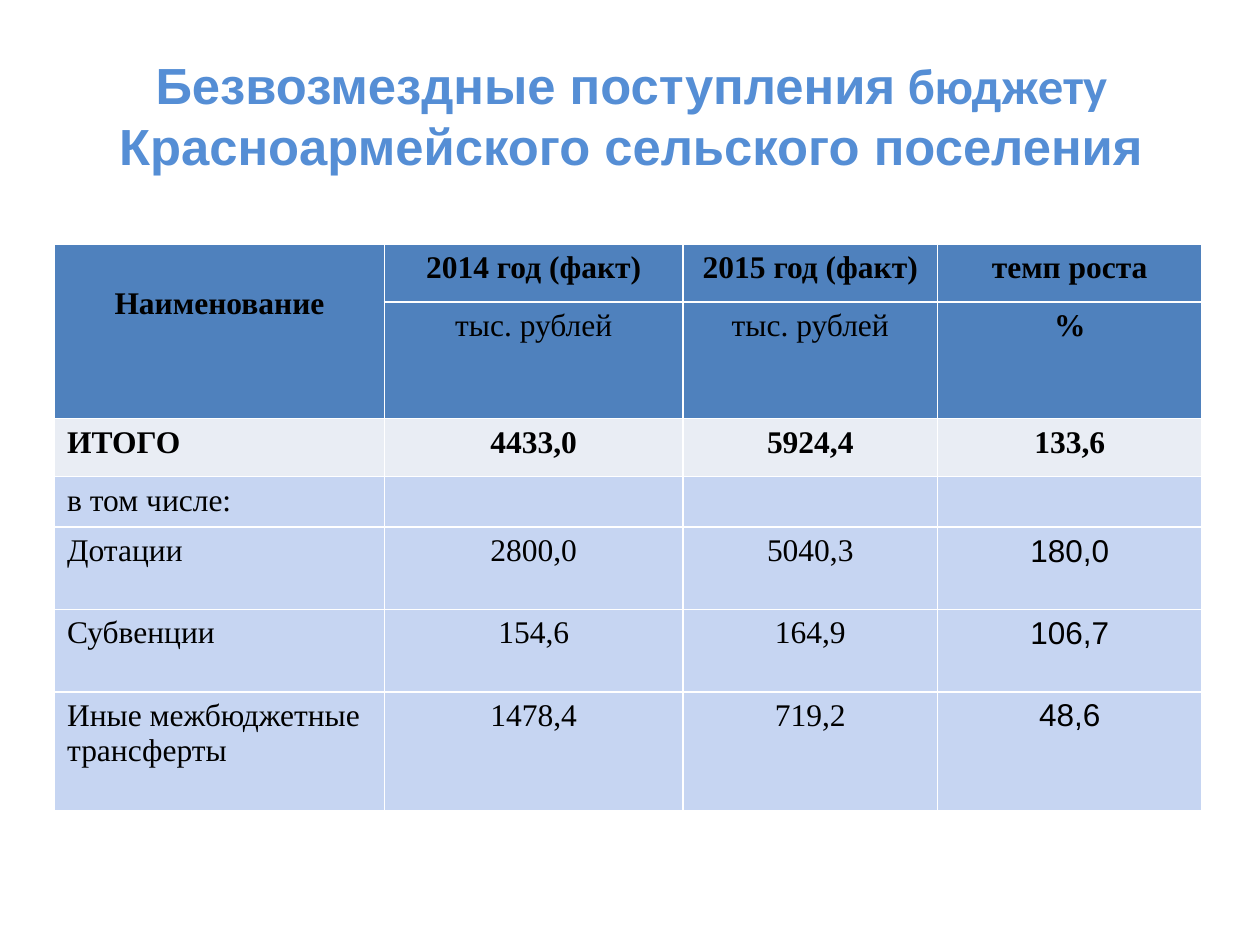
from pptx import Presentation
from pptx.dml.color import RGBColor
from pptx.enum.text import MSO_ANCHOR, PP_ALIGN
from pptx.oxml import parse_xml
from pptx.oxml.ns import nsdecls
from pptx.util import Cm, Pt

CENTER, LEFT = PP_ALIGN.CENTER, PP_ALIGN.LEFT
MIDDLE = MSO_ANCHOR.MIDDLE
SERIF, SANS, TITLE_SANS = "Times New Roman", "Arial", "Calibri"

TITLE = [
    ("Безвозмездные поступления", SANS),
    (" бюджету ", TITLE_SANS),
    ("Красноармейского сельского поселения", SANS),
]
HEADER, TOTAL, DETAIL = "4F81BD", "E9EDF4", "C6D5F2"
# Height in cm, fill, cell texts
ROWS = [
    (1.16, HEADER, ["Наименование", "2014 год (факт)", "2015 год (факт)", "темп роста"]),
    (2.35, HEADER, ["", "тыс. рублей", "тыс. рублей", "%"]),
    (1.17, TOTAL, ["ИТОГО", "4433,0", "5924,4", "133,6"]),
    (0.96, DETAIL, ["в том числе:", "", "", ""]),
    (1.66, DETAIL, ["Дотации", "2800,0", "5040,3", "180,0"]),
    (1.66, DETAIL, ["Субвенции", "154,6", "164,9", "106,7"]),
    (2.39, DETAIL, ["Иные межбюджетные трансферты", "1478,4", "719,2", "48,6"]),
]
COLUMN_WIDTHS = [6.65, 6.02, 5.13, 5.33]
GROWTH_COLUMN = 3


def color(value):
    return RGBColor.from_string(value)


def add_span(para, text, ink, **formats):
    span = para.add_run()
    span.text = text
    span.font.color.rgb = color(ink)
    for name, value in formats.items():
        setattr(span.font, name, value)


def add_borders(cell):
    """Draw white 1 pt lines on all four sides, placed before the fill."""
    properties = cell._tc.get_or_add_tcPr()
    for position, side in enumerate(("lnL", "lnR", "lnT", "lnB")):
        properties.insert(position, parse_xml(
            f'<a:{side} {nsdecls("a")} w="{Pt(1)}"><a:solidFill>'
            f'<a:srgbClr val="FFFFFF"/></a:solidFill></a:{side}>'))


def add_title(page):
    box = page.shapes.add_textbox(Cm(1.3), Cm(0.91), Cm(22.86), Cm(2.8))
    for name, value in {"word_wrap": True, "vertical_anchor": MIDDLE}.items():
        setattr(box.text_frame, name, value)
    para = box.text_frame.paragraphs[0]
    para.alignment = CENTER
    for text, font in TITLE:
        add_span(para, text, "558ED5", name=font, size=Pt(29), bold=True)


def add_income_table(page):
    table = page.shapes.add_table(
        len(ROWS), len(COLUMN_WIDTHS), Cm(1.1), Cm(4.93),
        Cm(sum(COLUMN_WIDTHS)), Cm(sum(row[0] for row in ROWS))).table
    for column, width in zip(table.columns, COLUMN_WIDTHS):
        column.width = Cm(width)
    for r, (height, fill, texts) in enumerate(ROWS):
        table.rows[r].height = Cm(height)
        for c, text in enumerate(texts):
            cell = table.cell(r, c)
            cell.fill.solid()
            cell.fill.fore_color.rgb = color(fill)
            add_borders(cell)
            para = cell.text_frame.paragraphs[0]
            para.alignment = LEFT if c == 0 and fill != HEADER else CENTER
            is_growth = c == GROWTH_COLUMN and fill == DETAIL and text
            add_span(para, text, "000000", size=Pt(18),
                     name=SANS if is_growth else SERIF,
                     bold=r in (0, 2) or text == "%")
    name_cell = table.cell(0, 0)
    name_cell.merge(table.cell(1, 0))
    name_cell.margin_top = Cm(0.85)


def main():
    deck = Presentation()
    deck.slide_width, deck.slide_height = Cm(25.4), Cm(19.05)
    page = deck.slides.add_slide(deck.slide_layouts[6])
    add_title(page)
    add_income_table(page)
    deck.save("out.pptx")


if __name__ == "__main__":
    main()
